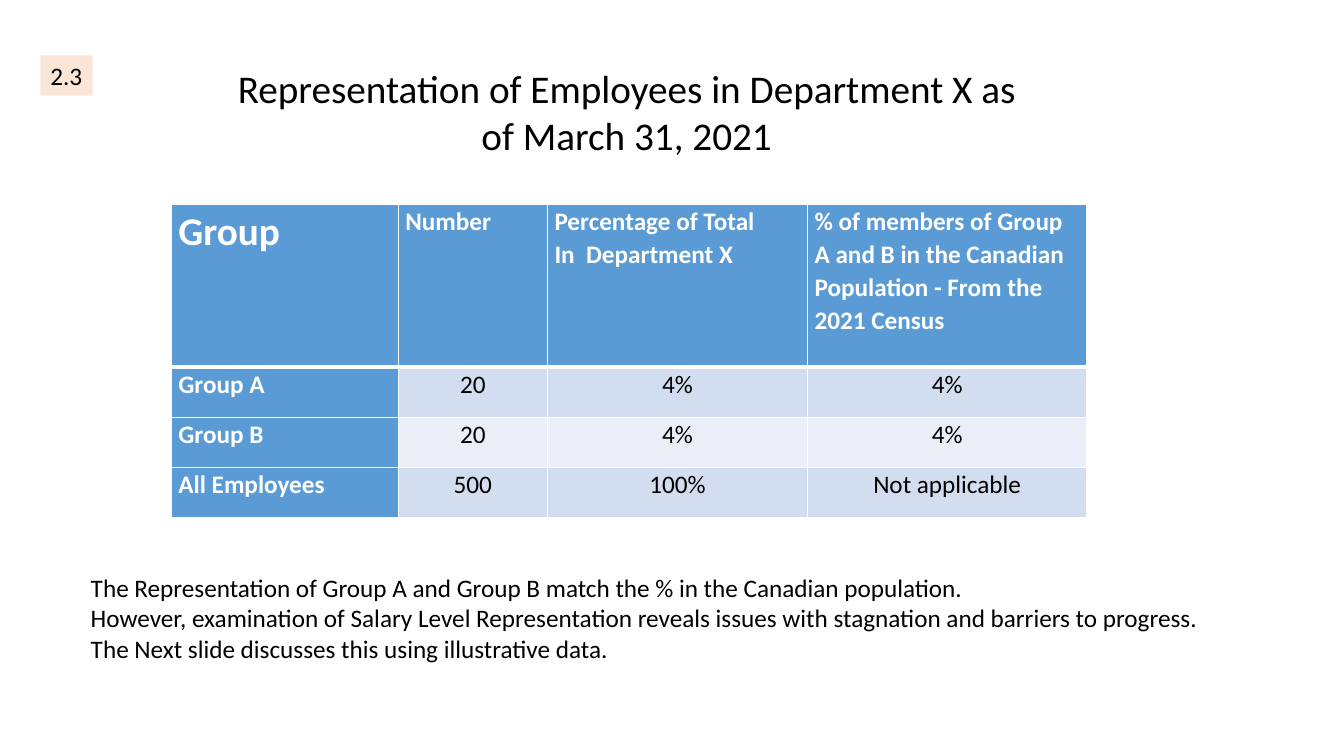
from lxml.etree import SubElement
from pptx import Presentation
from pptx.dml.color import RGBColor
from pptx.enum.shapes import MSO_SHAPE
from pptx.enum.text import MSO_ANCHOR, MSO_AUTO_SIZE, PP_ALIGN
from pptx.oxml.ns import qn
from pptx.util import Inches, Pt

FONT = "Calibri"
HUES = {"ink": "000000", "white": "FFFFFF", "head": "5B9BD5",
        "dark": "D2DEEF", "light": "EAEFF7", "badge": "FBE5D6"}
TITLE = "Representation of Employees in Department X as of March 31, 2021"
ROWS = [
    ["Group", "Number", "Percentage of Total\nIn  Department X",
     "% of members of Group A and B in the Canadian Population - From the 2021 Census"],
    ["Group A", "20", "4%", "4%"],
    ["Group B", "20", "4%", "4%"],
    ["All Employees", "500", "100%", "Not applicable"],
]
NOTES = [
    "The Representation of Group A and Group B match the % in the Canadian population.",
    "However, examination of Salary Level Representation reveals issues with "
    "stagnation and barriers to progress.",
    "The Next slide discusses this using illustrative data.",
]
COLS = [2.25, 1.48, 2.58, 2.77]
HIGHS = [1.61, 0.5, 0.5, 0.5]


def color(name):
    return RGBColor.from_string(HUES[name])


def place(shape, box):
    shape.left, shape.top, shape.width, shape.height = map(Inches, box)


def write(frame, lines, size=18, hue="ink", bold=False, align=PP_ALIGN.LEFT, space=1.0):
    """Fill a text frame with one paragraph for each line."""
    for i, line in enumerate(lines):
        para = frame.add_paragraph() if i else frame.paragraphs[0]
        para.alignment, para.line_spacing = align, space
        para.space_before = para.space_after = Pt(0)
        run = para.add_run()
        run.text = line
        font = run.font
        font.name, font.size, font.bold = FONT, Pt(size), bold
        font.color.rgb = color(hue)


def add_title(slide, box):
    title = slide.shapes.title
    place(title, box)
    frame = title.text_frame
    frame.word_wrap, frame.auto_size = True, MSO_AUTO_SIZE.NONE
    frame.vertical_anchor = MSO_ANCHOR.MIDDLE
    write(frame, [TITLE], 28, align=PP_ALIGN.CENTER)


def add_badge(slide, box):
    badge = slide.shapes.add_shape(MSO_SHAPE.RECTANGLE, *map(Inches, box))
    badge.shadow.inherit = False
    badge.fill.solid()
    badge.fill.fore_color.rgb = color("badge")
    badge.line.fill.background()
    badge.text_frame.word_wrap = False
    write(badge.text_frame, ["2.3"])


def add_notes(slide, box):
    body = slide.placeholders[1]
    place(body, box)
    frame = body.text_frame
    frame.word_wrap, frame.auto_size = False, MSO_AUTO_SIZE.NONE
    frame.vertical_anchor = MSO_ANCHOR.TOP
    write(frame, NOTES)
    # Plain lines without bullets
    for para in frame.paragraphs:
        props = para._p.get_or_add_pPr()
        props.set("marL", "0")
        props.set("indent", "0")
        SubElement(props, qn("a:buNone"))


def edge(cell, head):
    """Draw white cell borders, thicker beneath the header."""
    props = cell._tc.get_or_add_tcPr()
    for side in "LRTB":
        thick = 3 if head and side == "B" else 1
        line = SubElement(props, qn(f"a:ln{side}"), w=str(Pt(thick)))
        fill = SubElement(line, qn("a:solidFill"))
        SubElement(fill, qn("a:srgbClr"), val=HUES["white"])


def add_grid(slide, left, top):
    frame = slide.shapes.add_table(
        len(ROWS), len(COLS), Inches(left), Inches(top),
        Inches(sum(COLS)), Inches(sum(HIGHS)))
    grid = frame.table
    grid.first_col = True
    for col, width in zip(grid.columns, COLS):
        col.width = Inches(width)
    for r, texts in enumerate(ROWS):
        grid.rows[r].height = Inches(HIGHS[r])
        for c, text in enumerate(texts):
            cell = grid.cell(r, c)
            head = r == 0 or c == 0
            cell.margin_left = cell.margin_right = Inches(0.07)
            cell.margin_top = cell.margin_bottom = 0
            edge(cell, r == 0)
            cell.fill.solid()
            cell.fill.fore_color.rgb = color(
                "head" if head else "dark" if r % 2 else "light")
            write(cell.text_frame, text.split("\n"),
                  28 if r == c == 0 else 18,
                  "white" if head else "ink", head,
                  PP_ALIGN.LEFT if head else PP_ALIGN.CENTER, 1.07)


def main():
    deck = Presentation()
    deck.slide_width, deck.slide_height = Inches(13.33), Inches(7.5)
    slide = deck.slides.add_slide(deck.slide_layouts[1])
    add_grid(slide, 1.7, 2.03)
    add_title(slide, (2.17, 0.58, 8.09, 1.04))
    add_notes(slide, (0.8, 5.63, 11.31, 1.01))
    add_badge(slide, (0.4, 0.55, 0.52, 0.4))
    deck.save("out.pptx")


if __name__ == "__main__":
    main()
